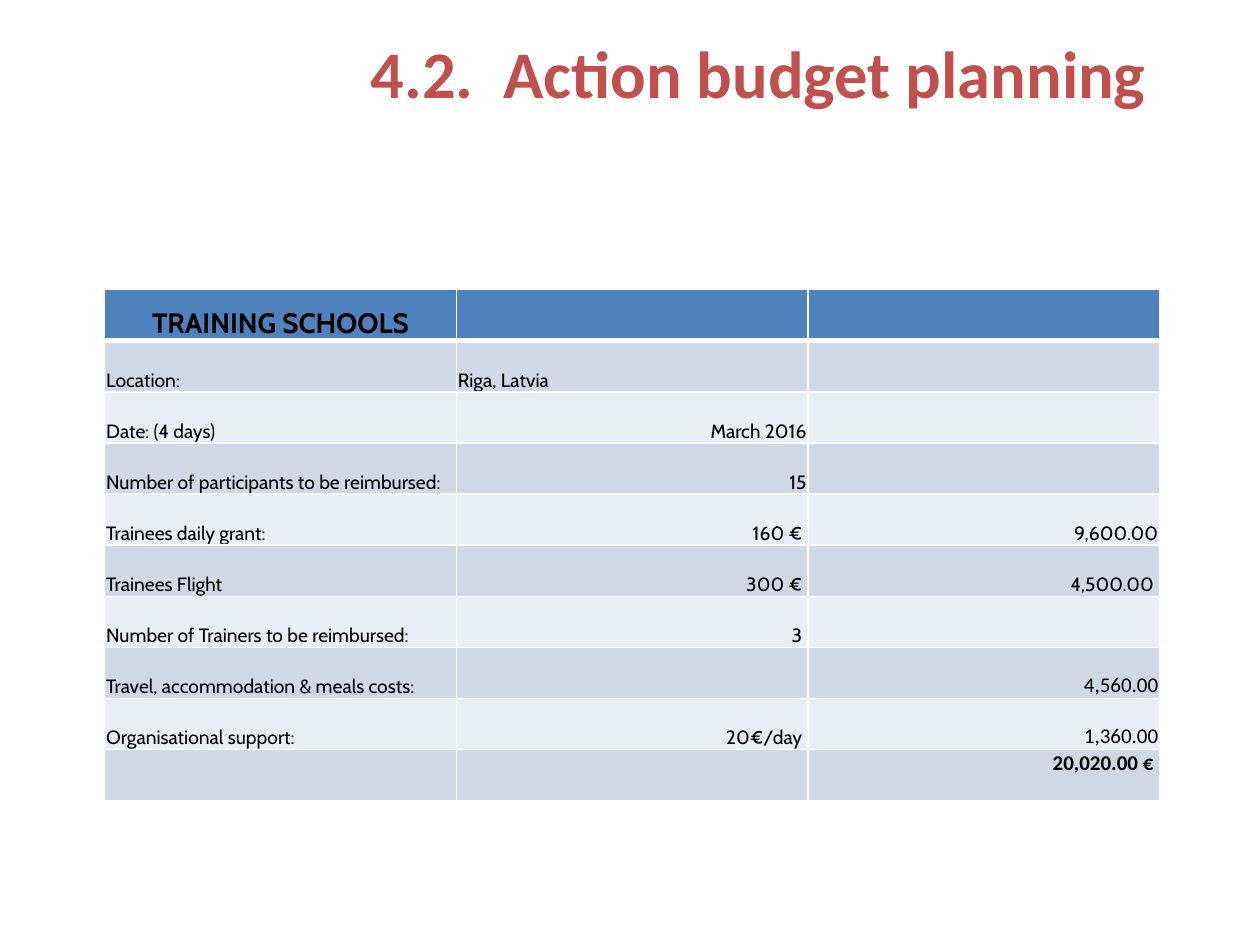
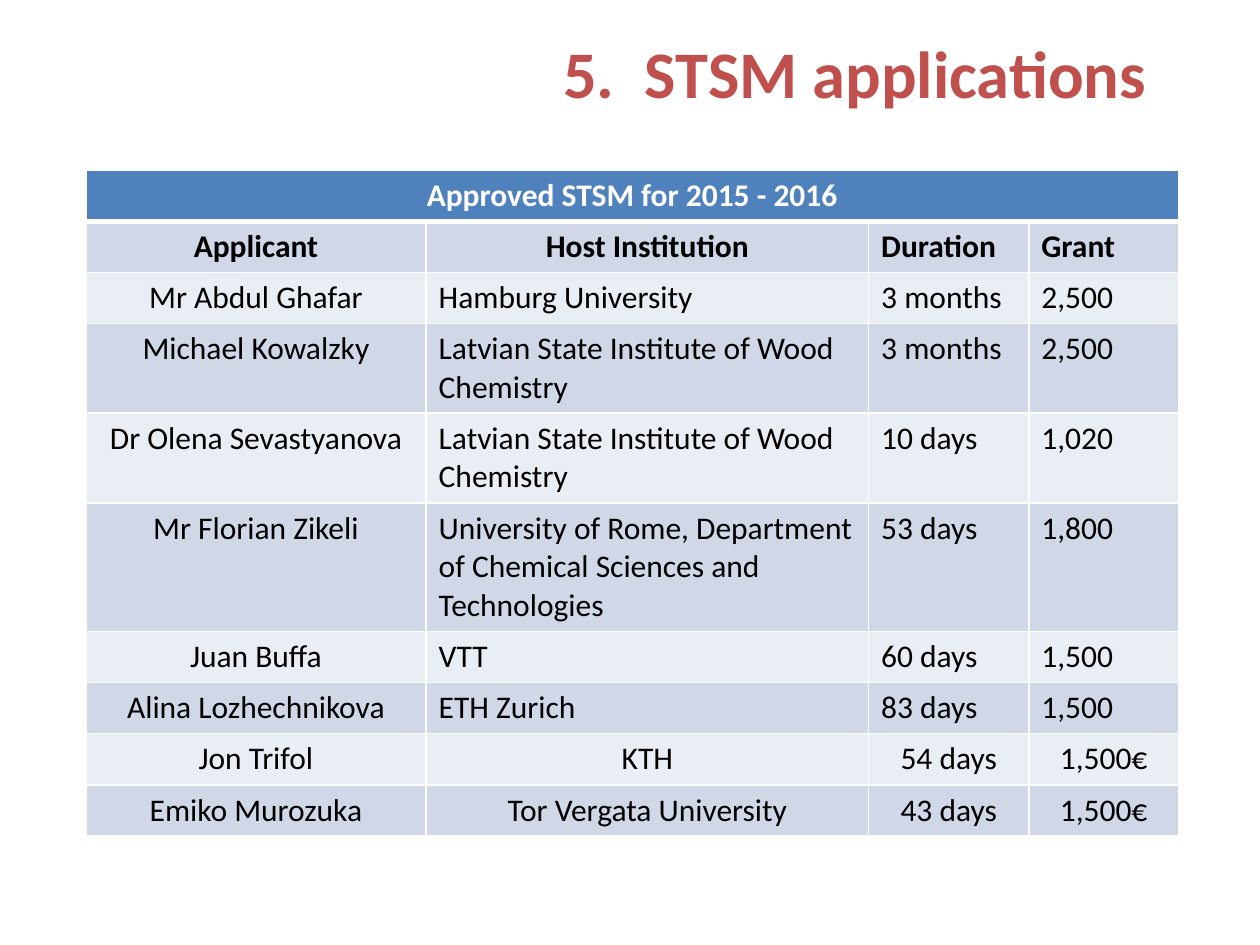
from lxml import etree
from pptx import Presentation
from pptx.dml.color import RGBColor
from pptx.enum.text import MSO_ANCHOR, MSO_AUTO_SIZE, PP_ALIGN
from pptx.oxml.ns import qn
from pptx.util import Cm, Pt

LEFT, MID, RIGHT = PP_ALIGN.LEFT, PP_ALIGN.CENTER, PP_ALIGN.RIGHT
TOP, LOW = MSO_ANCHOR.TOP, MSO_ANCHOR.BOTTOM
FIXED = MSO_AUTO_SIZE.NONE
RED, BLUE, BLACK, WHITE = "C0504D", "4F81BD", "000000", "FFFFFF"
BANDS = ("E9EDF4", "D0D8E8")
ROW, LINE = 1.03, 0.78

BUDGET = [
    ("TRAINING SCHOOLS", "", ""),
    ("Location:", "Riga, Latvia", ""),
    ("Date: (4 days)", "March 2016", ""),
    ("Number of participants to be reimbursed:", "15", ""),
    ("Trainees daily grant:", "160 € ", "9,600.00"),
    ("Trainees Flight", "300 € ", "4,500.00 "),
    ("Number of Trainers to be reimbursed:", "3 ", ""),
    ("Travel, accommodation & meals costs:", "", "4,560.00"),
    ("Organisational support:", "20€/day ", "1,360.00"),
    ("", "", "20,020.00 € "),
]

GRANTS = [
    ("Approved STSM for 2015 - 2016", "", "", ""),
    ("Applicant", "Host Institution", "Duration", "Grant"),
    ("Mr Abdul Ghafar", "Hamburg University", "3 months", "2,500"),
    ("Michael Kowalzky", "Latvian State Institute of Wood Chemistry", "3 months", "2,500"),
    ("Dr Olena Sevastyanova", "Latvian State Institute of Wood Chemistry", "10 days", "1,020"),
    ("Mr Florian Zikeli",
     "University of Rome, Department of Chemical Sciences and Technologies", "53 days", "1,800"),
    ("Juan Buffa", "VTT", "60 days", "1,500"),
    ("Alina Lozhechnikova", "ETH Zurich", "83 days", "1,500"),
    ("Jon Trifol", "KTH", "54 days", "1,500€"),
    ("Emiko Murozuka", "Tor Vergata University", "43 days", "1,500€"),
]


def color(code):
    return RGBColor.from_string(code)


def edge(cell, side, width):
    line = etree.SubElement(cell._tc.get_or_add_tcPr(), qn("a:" + side), w=str(Pt(width)))
    fill = etree.SubElement(line, qn("a:solidFill"))
    etree.SubElement(fill, qn("a:srgbClr"), val=WHITE)


def budget_look(row, col):
    if row == 0:
        return "Cabin", 16, True, BLACK, MID
    align = LEFT if col == 0 or row == 1 else RIGHT
    if col == 2 and row >= 7:
        return "Calibri", 12, row == 9, BLACK, align
    return "Cabin", 11, False, BLACK, align


def grant_look(row, col):
    center = col == 0 or row >= 8 or (row == 1 and col == 1)
    return "Calibri", 18, row < 2, BLACK if row else WHITE, MID if center else LEFT


class Deck:
    def __init__(self):
        self.show = Presentation()
        self.show.slide_width, self.show.slide_height = Cm(25.4), Cm(19.05)
        self.slide = None

    def label(self, para, text, font, size, bold, tint, align):
        para.text = text
        para.alignment = align
        para.font.name, para.font.size, para.font.bold = font, Pt(size), bold
        para.font.color.rgb = color(tint)

    def page(self, text):
        self.slide = self.show.slides.add_slide(self.show.slide_layouts[5])
        title = self.slide.shapes.title
        title.left, title.top, title.width, title.height = Cm(4.65), Cm(0.43), Cm(18.72), Cm(1.88)
        frame = title.text_frame
        frame.auto_size, frame.vertical_anchor = FIXED, LOW
        frame.margin_bottom = Cm(0.05)
        self.label(frame.paragraphs[0], text, "Calibri", 38, True, RED, RIGHT)

    def table(self, left, top, widths, data, look, lines):
        heights = [ROW + LINE * (lines.get(i, 1) - 1) for i in range(len(data))]
        grid = self.slide.shapes.add_table(
            len(data), len(widths), Cm(left), Cm(top), Cm(sum(widths)), Cm(sum(heights))).table
        grid.first_row = grid.horz_banding = False
        for col, width in zip(grid.columns, widths):
            col.width = Cm(width)
        for row, height in zip(grid.rows, heights):
            row.height = Cm(height)
        for r, items in enumerate(data):
            for c, text in enumerate(items):
                cell = grid.cell(r, c)
                edge(cell, "lnL", 1)
                edge(cell, "lnR", 1)
                edge(cell, "lnT", 3 if r == 1 else 1)
                edge(cell, "lnB", 1 if r else 3)
                cell.fill.solid()
                cell.fill.fore_color.rgb = color(BANDS[r % 2] if r else BLUE)
                if text:
                    self.label(cell.text_frame.paragraphs[0], text, *look(r, c))
        return grid


def main():
    deck = Deck()

    deck.page("4.2.  Action budget planning")
    costs = deck.table(2.11, 5.84, [7.09] * 3, BUDGET, budget_look, {})
    for cell in costs.iter_cells():
        cell.vertical_anchor = LOW
        cell.margin_left = cell.margin_right = cell.margin_top = Cm(0.03)
        cell.margin_bottom = 0
    costs.cell(9, 2).vertical_anchor = TOP

    deck.page("5.  STSM applications")
    grants = deck.table(1.73, 3.43, [6.86, 8.92, 3.23, 3.02], GRANTS, grant_look,
                        {3: 2, 4: 2, 5: 3})
    grants.cell(0, 0).merge(grants.cell(0, 3))

    deck.show.save("out.pptx")


if __name__ == "__main__":
    main()
